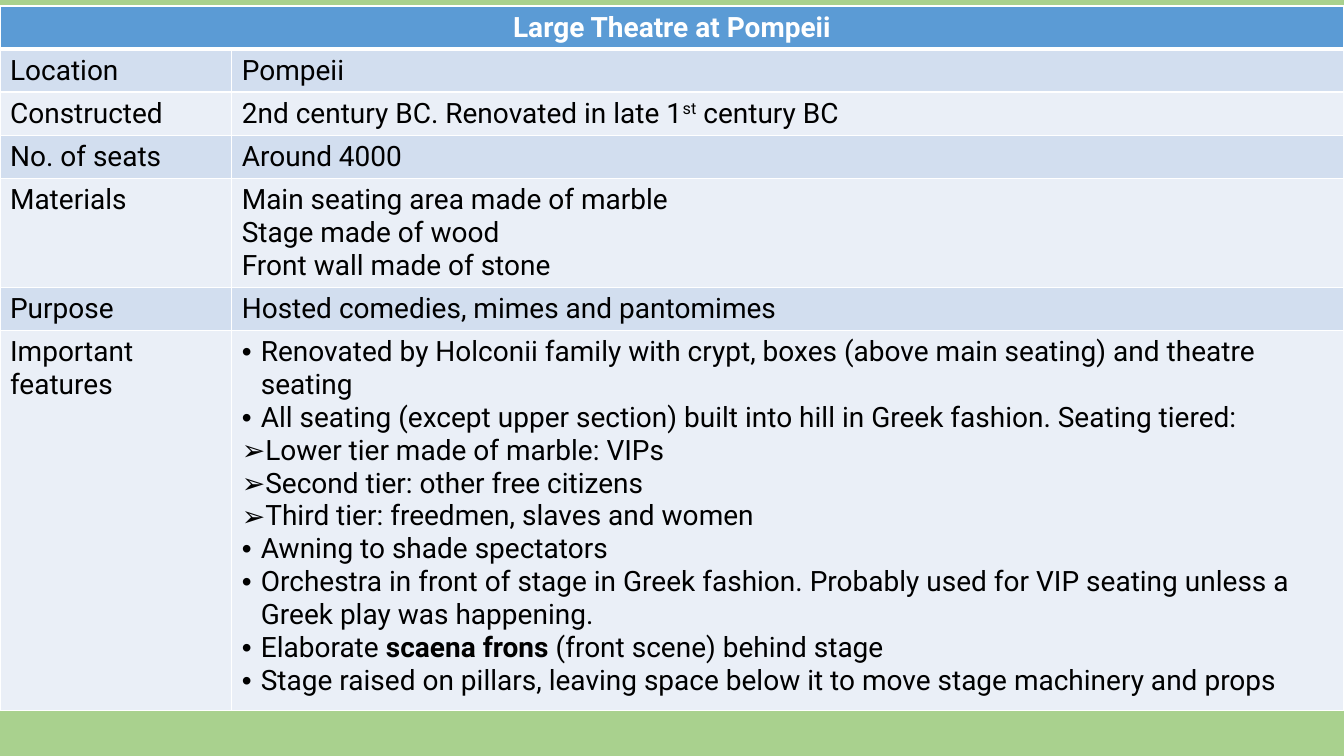
from dataclasses import dataclass

from lxml import etree
from pptx import Presentation
from pptx import util as u
from pptx.dml import color
from pptx.enum import text
from pptx.oxml import ns


@dataclass(frozen=True)
class Theme:
    """Colours, type and spacing of the slide."""
    page: str = "A9D18E"
    header: str = "5B9BD5"
    bands: tuple = ("D2DEEF", "EAEFF7")
    white: str = "FFFFFF"
    ink: str = "000000"
    font: str = "Roboto"
    size: int = 20
    rule: int = 1
    header_rule: int = 3
    hanging: float = 0.48


COLUMNS = (5.84, 28.03)
HEIGHTS = (1.02, 1.02, 1.02, 1.02, 2.54, 1.02, 9.58)
TITLE = "Large Theatre at Pompeii"
FEATURES = [
    ("•", "Renovated by Holconii family with crypt, boxes (above main seating) and theatre seating"),
    ("•", "All seating (except upper section) built into hill in Greek fashion. Seating tiered:"),
    ("➢", "Lower tier made of marble: VIPs"),
    ("➢", "Second tier: other free citizens"),
    ("➢", "Third tier: freedmen, slaves and women"),
    ("•", "Awning to shade spectators"),
    ("•", "Orchestra in front of stage in Greek fashion. Probably used for VIP seating "
          "unless a Greek play was happening."),
    ("•", "Elaborate ", ("scaena frons ", "bold"), "(front scene) behind stage"),
    ("•", "Stage raised on pillars, leaving space below it to move stage machinery and props"),
]
FACTS = [
    ("Location", [(None, "Pompeii")]),
    ("Constructed", [(None, "2nd century BC. Renovated in late 1", ("st", "super"), " century BC")]),
    ("No. of seats", [(None, "Around 4000")]),
    ("Materials", [(None, "Main seating area made of marble"),
                   (None, "Stage made of wood"),
                   (None, "Front wall made of stone")]),
    ("Purpose", [(None, "Hosted comedies, mimes and pantomimes")]),
    ("Important features", FEATURES),
]


class SlideBuilder:
    """Draws styled elements on the current slide."""

    def __init__(self, page, theme):
        """Keep the slide and theme, and paint the background."""
        self.page, self.theme = page, theme
        page.background.fill.solid()
        page.background.fill.fore_color.rgb = color.RGBColor.from_string(theme.page)

    def table(self, left, top, widths, heights):
        """Add a plain table with the given column widths and row heights."""
        frame = self.page.shapes.add_table(
            len(heights), len(widths), u.Cm(left), u.Cm(top), u.Cm(sum(widths)), u.Cm(sum(heights)))
        table = frame.table
        table.first_row = table.horz_banding = False
        for column, width in zip(table.columns, widths):
            column.width = u.Cm(width)
        for row, height in zip(table.rows, heights):
            row.height = u.Cm(height)
        return table

    def cell(self, cell, fill, paras, ink=None, header=False):
        """Fill and border a cell, then write its paragraphs."""
        cell.fill.solid()
        cell.fill.fore_color.rgb = color.RGBColor.from_string(fill)
        self.borders(cell, header)
        for index, (bullet, *spans) in enumerate(paras):
            frame = cell.text_frame
            para = frame.add_paragraph() if index else frame.paragraphs[0]
            if header:
                para.alignment = text.PP_ALIGN.CENTER
            if bullet:
                self.bullet(para, bullet)
            for span in spans:
                words, style = (span, None) if isinstance(span, str) else span
                self.span(para, words, style, ink or self.theme.ink)

    def borders(self, cell, header):
        """Rule all four sides in white, heavier below the header."""
        properties = cell._tc.get_or_add_tcPr()
        for index, side in enumerate("LRTB"):
            heavy = header and side == "B"
            width = self.theme.header_rule if heavy else self.theme.rule
            line = etree.Element(ns.qn(f"a:ln{side}"), w=str(u.Pt(width)))
            fill = etree.SubElement(line, ns.qn("a:solidFill"))
            etree.SubElement(fill, ns.qn("a:srgbClr"), val=self.theme.white)
            properties.insert(index, line)

    def bullet(self, para, symbol):
        """Give a paragraph a hanging bullet."""
        properties = para._p.get_or_add_pPr()
        hanging = u.Cm(self.theme.hanging)
        properties.set("marL", str(hanging))
        properties.set("indent", str(-hanging))
        etree.SubElement(properties, ns.qn("a:buFont"), typeface="Arial")
        etree.SubElement(properties, ns.qn("a:buChar"), char=symbol)

    def span(self, para, words, style, ink):
        """Add one styled run."""
        span = para.add_run()
        span.text = words
        span.font.name = self.theme.font
        span.font.size = u.Pt(self.theme.size)
        span.font.bold = style == "bold"
        span.font.color.rgb = color.RGBColor.from_string(ink)
        if style == "super":
            span._r.get_or_add_rPr().set("baseline", "30000")


def main():
    """Build and save the deck."""
    theme = Theme()
    deck = Presentation()
    deck.slide_width, deck.slide_height = u.Cm(33.87), u.Cm(19.05)
    builder = SlideBuilder(deck.slides.add_slide(deck.slide_layouts[6]), theme)
    table = builder.table(0, 0.15, COLUMNS, HEIGHTS)
    table.cell(0, 0).merge(table.cell(0, 1))
    builder.cell(table.cell(0, 0), theme.header, [(None, (TITLE, "bold"))], theme.white, header=True)
    builder.cell(table.cell(0, 1), theme.header, [], header=True)
    for row, (label, paras) in enumerate(FACTS, start=1):
        band = theme.bands[(row - 1) % 2]
        builder.cell(table.cell(row, 0), band, [(None, label)])
        builder.cell(table.cell(row, 1), band, paras)
    deck.save("out.pptx")


if __name__ == "__main__":
    main()
